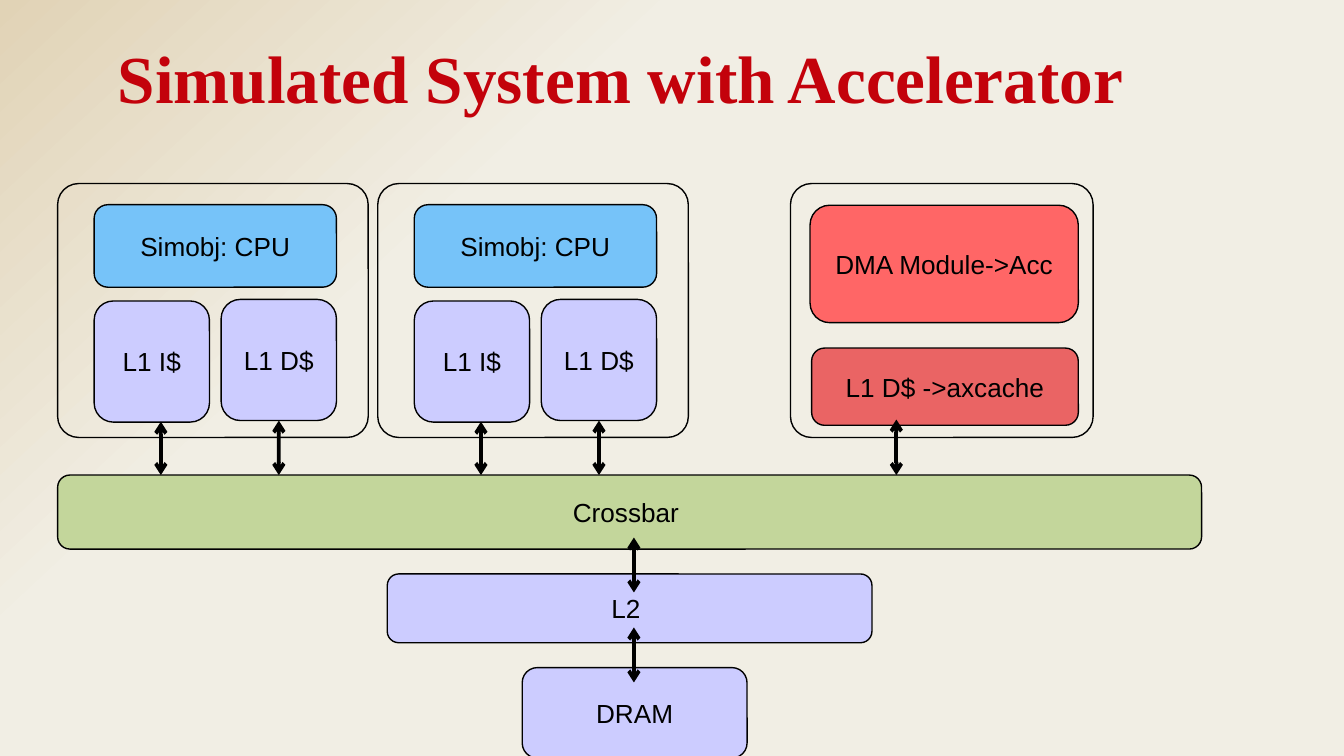
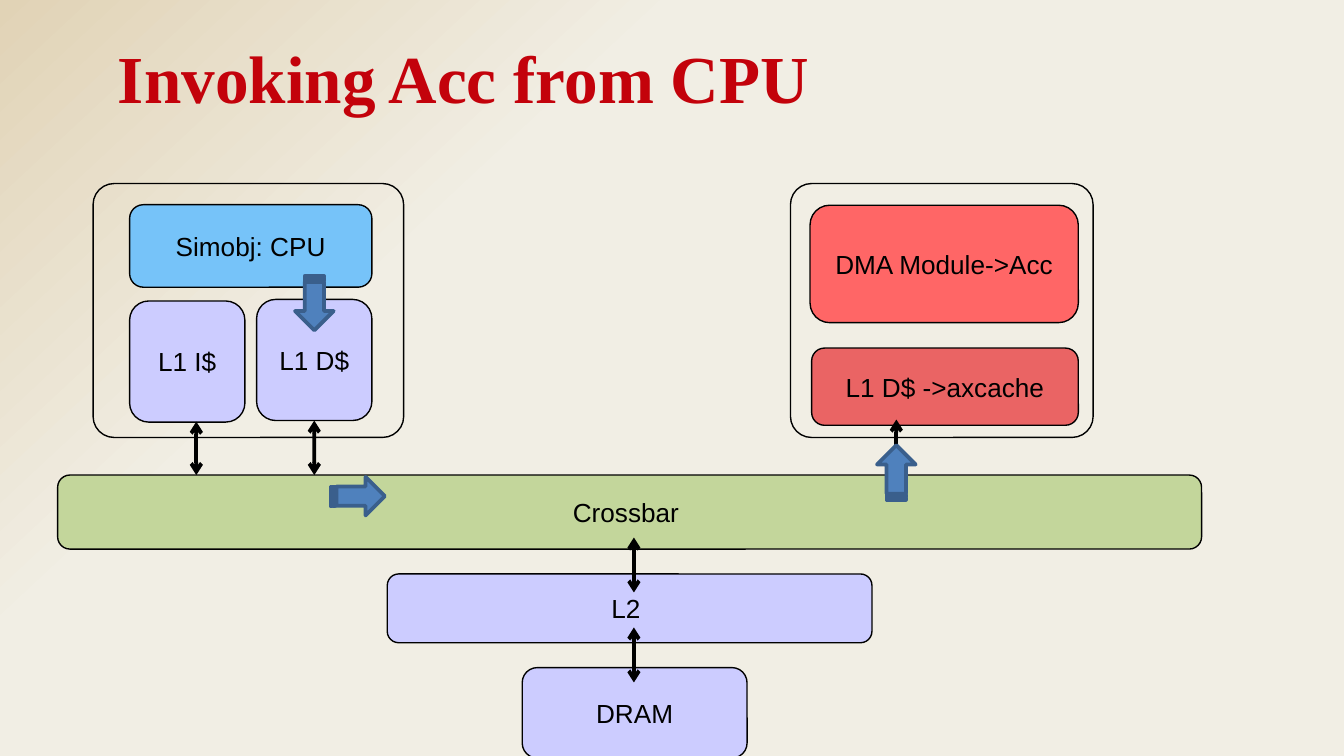
from dataclasses import dataclass

from lxml import etree
from pptx import Presentation
from pptx import util as u
from pptx.dml.color import RGBColor
from pptx.enum import shapes, text
from pptx.oxml import ns


@dataclass(frozen=True)
class Theme:
    title: str = "C3020B"
    ink: str = "000000"
    cpu: str = "76C3F9"
    cache: str = "CCCCFF"
    bus: str = "C3D69B"
    dma: str = "FF6666"
    axcache: str = "EA6464"
    flow: str = "4F81BD"
    flow_edge: str = "3A5F8C"
    sand: str = "E1D3B6"
    paper: str = "F1EEE4"
    title_font: str = "Times New Roman"
    body_font: str = "Arial"
    title_size: int = 36
    label_size: int = 14
    thin: float = 0.75
    thick: float = 2


THEME = Theme()

# Content, in centimetres: (label, fill, left, top, width, height)
TITLE_AREA = (1.98, 0.43, 19.84, 1.8)
BUS_TOP = 8.98
CLUSTER_TOP = 3.47
CLUSTER_SIZE = (5.87, 4.8)

# Left and top are measured from the corner of the core's frame
CORE_BOXES = [
    ("Simobj: CPU", THEME.cpu, 0.69, 0.4, 4.58, 1.56),
    ("L1 I$", THEME.cache, 0.69, 2.22, 2.18, 2.29),
    ("L1 D$", THEME.cache, 3.09, 2.19, 2.18, 2.29),
]
INSTRUCTION_LINK = (1.95, 4.5)

ACCELERATOR_FRAME = (14.94, CLUSTER_TOP, 5.72, 4.8)
SHARED_BOXES = [
    ("L1 D$ ->axcache", THEME.axcache, 15.34, 6.58, 5.04, 1.46),
    ("DMA Module->Acc", THEME.dma, 15.31, 3.88, 5.07, 2.22),
    ("Crossbar ", THEME.bus, 1.09, BUS_TOP, 21.62, 1.4),
    ("L2 ", THEME.cache, 7.32, 10.85, 9.16, 1.3),
    ("DRAM", THEME.cache, 9.87, 12.62, 4.25, 1.71),
]
# (x, top, bottom)
SHARED_LINKS = [
    (16.94, 7.93, BUS_TOP),
    (11.98, 10.16, 11.2),
    (11.98, 11.86, 12.9),
]

# Flow arrows: (centre x, centre y, rotation)
FLOW_SIZE = (1.03, 0.73)
PAGES = [
    {"title": "Simulated System with Accelerator",
     "cores": [1.09, 7.14], "flow": []},
    {"title": "Invoking Acc from CPU",
     "cores": [1.76],
     "flow": [(5.94, 5.73, 90), (6.76, 9.38, 0), (16.94, 8.93, 270)]},
]


def rgb(value):
    return RGBColor.from_string(value)


def lengths(*values):
    return [u.Cm(value) for value in values]


def write(box, words, *, size=THEME.label_size, font=THEME.body_font,
          color=THEME.ink, bold=False, align=text.PP_ALIGN.CENTER,
          anchor=text.MSO_ANCHOR.MIDDLE, inset=0):
    frame = box.text_frame
    frame.word_wrap = True
    frame.auto_size = text.MSO_AUTO_SIZE.NONE
    frame.vertical_anchor = anchor
    frame.margin_left = frame.margin_right = u.Cm(inset)
    frame.margin_top = frame.margin_bottom = u.Cm(inset)
    para = frame.paragraphs[0]
    para.alignment = align
    span = para.add_run()
    span.text = words
    span.font.size, span.font.name = u.Pt(size), font
    span.font.bold, span.font.color.rgb = bold, rgb(color)


def add_shape(page, kind, area, fill=None, edge=THEME.ink, weight=THEME.thin):
    shape = page.shapes.add_shape(kind, *lengths(*area))
    shape.shadow.inherit = False
    if fill:
        shape.fill.solid()
        shape.fill.fore_color.rgb = rgb(fill)
    else:
        shape.fill.background()
    shape.line.color.rgb = rgb(edge)
    shape.line.width = u.Pt(weight)
    return shape


def add_box(page, label, fill, *area):
    box = add_shape(page, shapes.MSO_SHAPE.ROUNDED_RECTANGLE, area, fill)
    write(box, label)
    return box


def add_frame(page, *area):
    frame = add_shape(page, shapes.MSO_SHAPE.ROUNDED_RECTANGLE, area)
    frame.adjustments[0] = 0.083


def add_link(page, x, top, bottom, source=None):
    link = page.shapes.add_connector(shapes.MSO_CONNECTOR.STRAIGHT,
                                     *lengths(x, top, x, bottom))
    if source is not None:
        link.begin_connect(source, 2)
    link.line.color.rgb = rgb(THEME.ink)
    link.line.width = u.Pt(THEME.thick)
    outline = link.line._get_or_add_ln()
    for end in ("a:headEnd", "a:tailEnd"):
        etree.SubElement(outline, ns.qn(end), type="arrow")
    etree.SubElement(outline.getparent(), ns.qn("a:effectLst"))


def add_core(page, left):
    add_frame(page, left, CLUSTER_TOP, *CLUSTER_SIZE)
    for label, fill, dx, dy, width, height in CORE_BOXES:
        box = add_box(page, label, fill, left + dx, CLUSTER_TOP + dy,
                      width, height)
    # The last box is the data cache, linked from its bottom middle
    add_link(page, left + dx + width / 2, CLUSTER_TOP + dy + height,
             BUS_TOP, source=box)
    dx, dy = INSTRUCTION_LINK
    add_link(page, left + dx, CLUSTER_TOP + dy, BUS_TOP)


def add_flow(page, x, y, rotation):
    width, height = FLOW_SIZE
    area = (x - width / 2, y - height / 2, width, height)
    arrow = add_shape(page, shapes.MSO_SHAPE.STRIPED_RIGHT_ARROW, area,
                      THEME.flow, THEME.flow_edge, THEME.thick)
    arrow.rotation = rotation


def paint_background(master):
    fill = master.background.fill
    fill.gradient()
    fill.gradient_angle = 313
    stops = fill.gradient_stops
    for stop, color, position in zip(stops, (THEME.sand, THEME.paper), (0, 0.32)):
        stop.color.rgb, stop.position = rgb(color), position
    # Slightly transparent first stop, and a third stop at the far end
    stop_list = master.element.find(".//" + ns.qn("a:gsLst"))
    etree.SubElement(stop_list[0][0], ns.qn("a:alpha"), val="80000")
    last = etree.SubElement(stop_list, ns.qn("a:gs"), pos="100000")
    etree.SubElement(last, ns.qn("a:srgbClr"), val=THEME.paper)


def add_page(deck, content):
    page = deck.slides.add_slide(deck.slide_layouts[5])
    title = page.shapes.title
    title.left, title.top, title.width, title.height = lengths(*TITLE_AREA)
    write(title, content["title"], size=THEME.title_size,
          font=THEME.title_font, color=THEME.title, bold=True,
          align=text.PP_ALIGN.LEFT, anchor=text.MSO_ANCHOR.TOP, inset=0.25)

    # System parts
    add_frame(page, *ACCELERATOR_FRAME)
    for box in SHARED_BOXES:
        add_box(page, *box)
    for left in content["cores"]:
        add_core(page, left)

    # Links and flow
    for link in SHARED_LINKS:
        add_link(page, *link)
    for arrow in content["flow"]:
        add_flow(page, *arrow)


def main():
    deck = Presentation()
    deck.slide_width, deck.slide_height = lengths(25.4, 14.29)
    paint_background(deck.slide_master)
    for content in PAGES:
        add_page(deck, content)
    deck.save("out.pptx")


if __name__ == "__main__":
    main()
